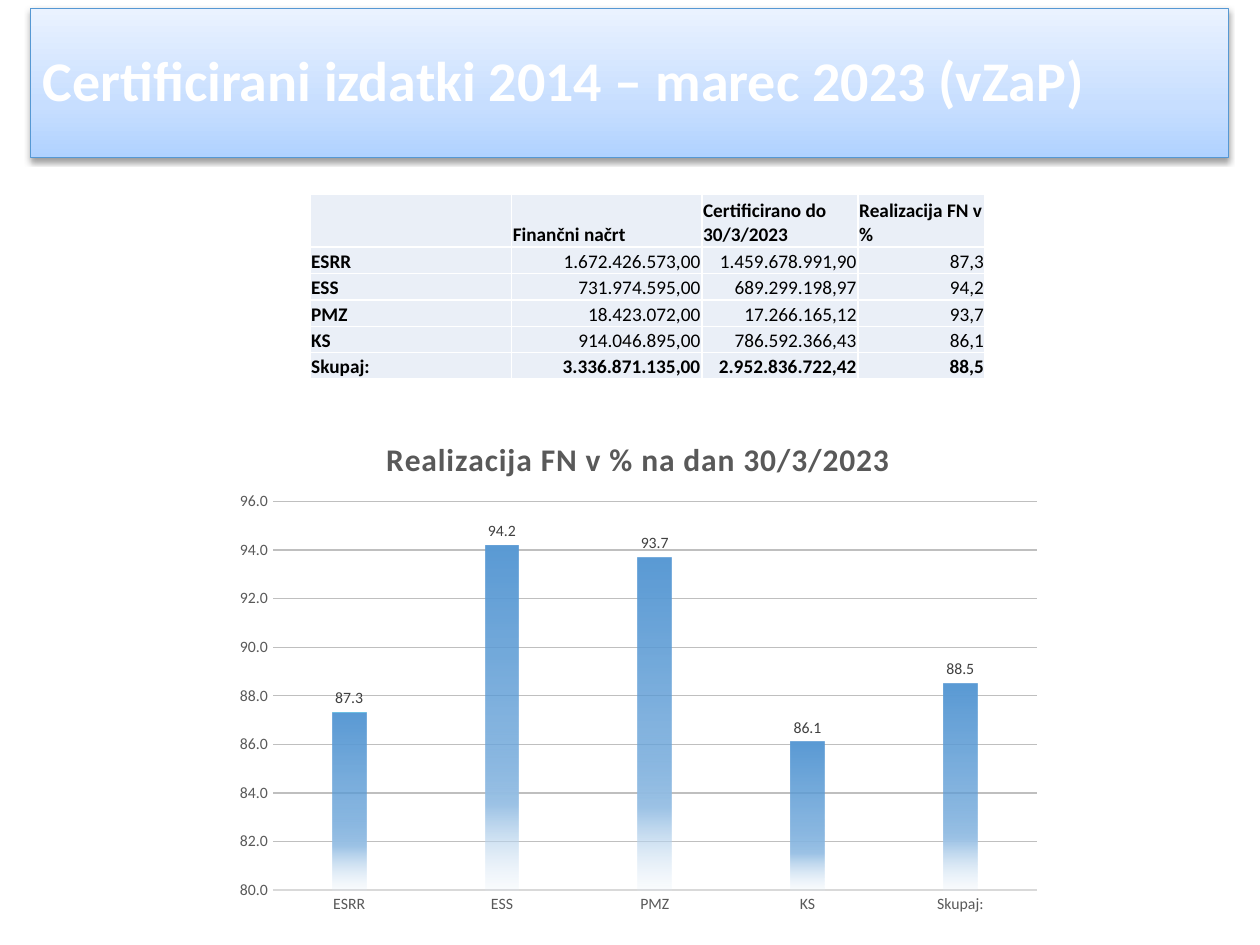
import lxml.etree
import pptx
import pptx.chart.data
import pptx.dml.color
import pptx.enum.chart
import pptx.enum.shapes
import pptx.enum.text
import pptx.oxml
import pptx.oxml.ns
import pptx.util
from pptx.util import Inches

COLORS = {
    "white": "FFFFFF", "black": "000000", "banner_line": "5698D3",
    "cell": "EAEFF7", "axis_text": "595959", "label_text": "404040",
    "axis_line": "D9D9D9", "grid": "BFBFBF",
}
BANNER_STOPS = [(0, "B0D2FF", 100), (35, "C7DEFF", 100), (100, "EAF2FF", 100)]
COLUMN_STOPS = [(0, "5B9BD5", 100), (51, "5B9BD5", 75), (75, "9DC3E6", 100), (100, "DEEBF7", 15)]
HEADINGS = ["", "Finančni načrt", "Certificirano do 30/3/2023", "Realizacija FN v %"]
FUNDS = [
    ("ESRR", "1.672.426.573,00", "1.459.678.991,90", "87,3"),
    ("ESS", "731.974.595,00", "689.299.198,97", "94,2"),
    ("PMZ", "18.423.072,00", "17.266.165,12", "93,7"),
    ("KS", "914.046.895,00", "786.592.366,43", "86,1"),
    ("Skupaj:", "3.336.871.135,00", "2.952.836.722,42", "88,5"),
]


def rgb(name):
    """Return the named colour."""
    return pptx.dml.color.RGBColor.from_string(COLORS[name])


def set_font(font, size, color, bold=False):
    """Set Calibri with the given size, colour and weight."""
    font.name = "Calibri"
    font.size = pptx.util.Pt(size)
    font.bold = bold
    font.color.rgb = rgb(color)


def set_line(line, color, width):
    """Set a solid line."""
    line.color.rgb = rgb(color)
    line.width = pptx.util.Pt(width)


def drawing_xml(tag, attributes, content):
    """Parse one DrawingML element."""
    namespace = pptx.oxml.ns.nsdecls("a")
    return pptx.oxml.parse_xml(f"<a:{tag} {namespace} {attributes}>{content}</a:{tag}>")


def set_gradient(fill, properties, stops, angle):
    """Fill with stops of position, colour and opacity along a clockwise angle."""
    fill.background()
    stop_xml = "".join(
        f'<a:gs pos="{position * 1000}"><a:srgbClr val="{color}">'
        f'<a:alpha val="{opacity * 1000}"/></a:srgbClr></a:gs>'
        for position, color, opacity in stops
    )
    gradient = drawing_xml(
        "gradFill", 'rotWithShape="1"',
        f'<a:gsLst>{stop_xml}</a:gsLst><a:lin ang="{angle * 60000}" scaled="0"/>',
    )
    properties.replace(properties.find(pptx.oxml.ns.qn("a:noFill")), gradient)


def add_banner(slide, left, top, width, height):
    """Add the title banner with its gradient and shadow."""
    banner = slide.shapes.add_shape(
        pptx.enum.shapes.MSO_SHAPE.RECTANGLE, left, top, width, height)
    properties = banner._element.spPr
    set_gradient(banner.fill, properties, BANNER_STOPS, 270)
    set_line(banner.line, "banner_line", 0.75)
    banner.shadow.inherit = False
    properties.find(pptx.oxml.ns.qn("a:effectLst")).append(drawing_xml(
        "outerShdw",
        f'blurRad="{pptx.util.Pt(3.1)}" dist="{pptx.util.Pt(1.6)}" dir="5400000" rotWithShape="0"',
        f'<a:srgbClr val="{COLORS["black"]}"><a:alpha val="38000"/></a:srgbClr>',
    ))
    frame = banner.text_frame
    frame.word_wrap = True
    frame.vertical_anchor = pptx.enum.text.MSO_ANCHOR.MIDDLE
    title = frame.paragraphs[0]
    title.text = "Certificirani izdatki 2014 – marec 2023 (vZaP)"
    title.alignment = pptx.enum.text.PP_ALIGN.LEFT
    title.line_spacing = 0.9
    set_font(title.font, 32, "white", True)


def format_cell(cell, text, bold, numeric):
    """Write and style one table cell."""
    cell.margin_left = cell.margin_right = cell.margin_top = Inches(0.01)
    cell.margin_bottom = 0
    cell.vertical_anchor = pptx.enum.text.MSO_ANCHOR.BOTTOM
    cell.fill.solid()
    cell.fill.fore_color.rgb = rgb("cell")
    properties = cell._tc.get_or_add_tcPr()
    for index, side in enumerate(("lnL", "lnR", "lnT", "lnB")):
        properties.insert(index, drawing_xml(
            side, f'w="{pptx.util.Pt(1)}"',
            f'<a:solidFill><a:srgbClr val="{COLORS["white"]}"/></a:solidFill>'))
    paragraph = cell.text_frame.paragraphs[0]
    paragraph.text = text
    align = pptx.enum.text.PP_ALIGN
    paragraph.alignment = align.RIGHT if numeric else align.LEFT
    set_font(paragraph.font, 11, "black", bold)


def add_funds_table(slide, left, top, width, height):
    """Add the table of planned and certified amounts."""
    rows = [HEADINGS, *FUNDS]
    table = slide.shapes.add_table(len(rows), len(HEADINGS), left, top, width, height).table
    table.first_row = table.horz_banding = False
    for column, column_width in zip(table.columns, (1.6, 1.51, 1.24, 1.01)):
        column.width = Inches(column_width)
    for row_index, values in enumerate(rows):
        table.rows[row_index].height = Inches(0.21 if row_index else 0.42)
        for column_index, text in enumerate(values):
            numeric = row_index > 0 and column_index > 0
            bold = not numeric or row_index == len(FUNDS)
            format_cell(table.cell(row_index, column_index), text, bold, numeric)


def add_realisation_chart(slide, left, top, width, height):
    """Add the column chart of realisation in percent."""
    data = pptx.chart.data.CategoryChartData(number_format="#,##0.0")
    data.categories = [fund[0] for fund in FUNDS]
    data.add_series("Realizacija FN v %", [float(fund[3].replace(",", ".")) for fund in FUNDS])
    chart = slide.shapes.add_chart(
        pptx.enum.chart.XL_CHART_TYPE.COLUMN_CLUSTERED, left, top, width, height, data).chart
    set_font(chart.font, 10, "black")
    chart.has_legend = False

    title = chart.chart_title.text_frame.paragraphs[0]
    title.text = "Realizacija FN v % na dan 30/3/2023"
    set_font(title.font, 18, "axis_text", True)
    title.font._element.set("spc", "50")

    for axis in (chart.category_axis, chart.value_axis):
        axis.major_tick_mark = axis.minor_tick_mark = pptx.enum.chart.XL_TICK_MARK.NONE
        set_font(axis.tick_labels.font, 9, "axis_text")
    set_line(chart.category_axis.format.line, "axis_line", 0.75)
    percent = chart.value_axis
    percent.minimum_scale, percent.maximum_scale, percent.major_unit = 80, 96, 2
    percent.format.line.fill.background()
    set_line(percent.major_gridlines.format.line, "grid", 0.75)
    percent.tick_labels.number_format = "#,##0.0"
    percent.tick_labels.number_format_is_linked = False

    plot = chart.plots[0]
    plot.vary_by_categories = False
    plot.gap_width, plot.overlap = 355, -70
    columns = plot.series[0]
    set_gradient(columns.format.fill, columns._element.get_or_add_spPr(), COLUMN_STOPS, 90)
    labels = columns.data_labels
    labels.show_value = True
    labels.position = pptx.enum.chart.XL_LABEL_POSITION.OUTSIDE_END
    labels.number_format = "#,##0.0"
    labels.number_format_is_linked = False
    set_font(labels.font, 9, "label_text")

    plot_area = chart._chartSpace.chart.plotArea
    for old_layout in plot_area.findall(pptx.oxml.ns.qn("c:layout")):
        plot_area.remove(old_layout)
    settings = {"layoutTarget": "inner", "xMode": "edge", "yMode": "edge",
                "x": 0.06, "y": 0.17, "w": 0.92, "h": 0.76}
    layout_xml = "".join(f'<c:{key} val="{value}"/>' for key, value in settings.items())
    plot_area.insert(0, pptx.oxml.parse_xml(
        f'<c:layout {pptx.oxml.ns.nsdecls("c")}><c:manualLayout>{layout_xml}'
        "</c:manualLayout></c:layout>"))


def main():
    """Build and save the slide."""
    presentation = pptx.Presentation()
    presentation.slide_width, presentation.slide_height = Inches(10), Inches(7.5)
    slide = presentation.slides.add_slide(presentation.slide_layouts[6])
    add_banner(slide, Inches(0.24), Inches(0.07), Inches(9.51), Inches(1.18))
    add_funds_table(slide, Inches(2.46), Inches(1.54), Inches(5.36), Inches(1.46))
    add_realisation_chart(slide, Inches(1.77), Inches(3.29), Inches(6.59), Inches(4.06))
    presentation.save("out.pptx")


if __name__ == "__main__":
    main()
